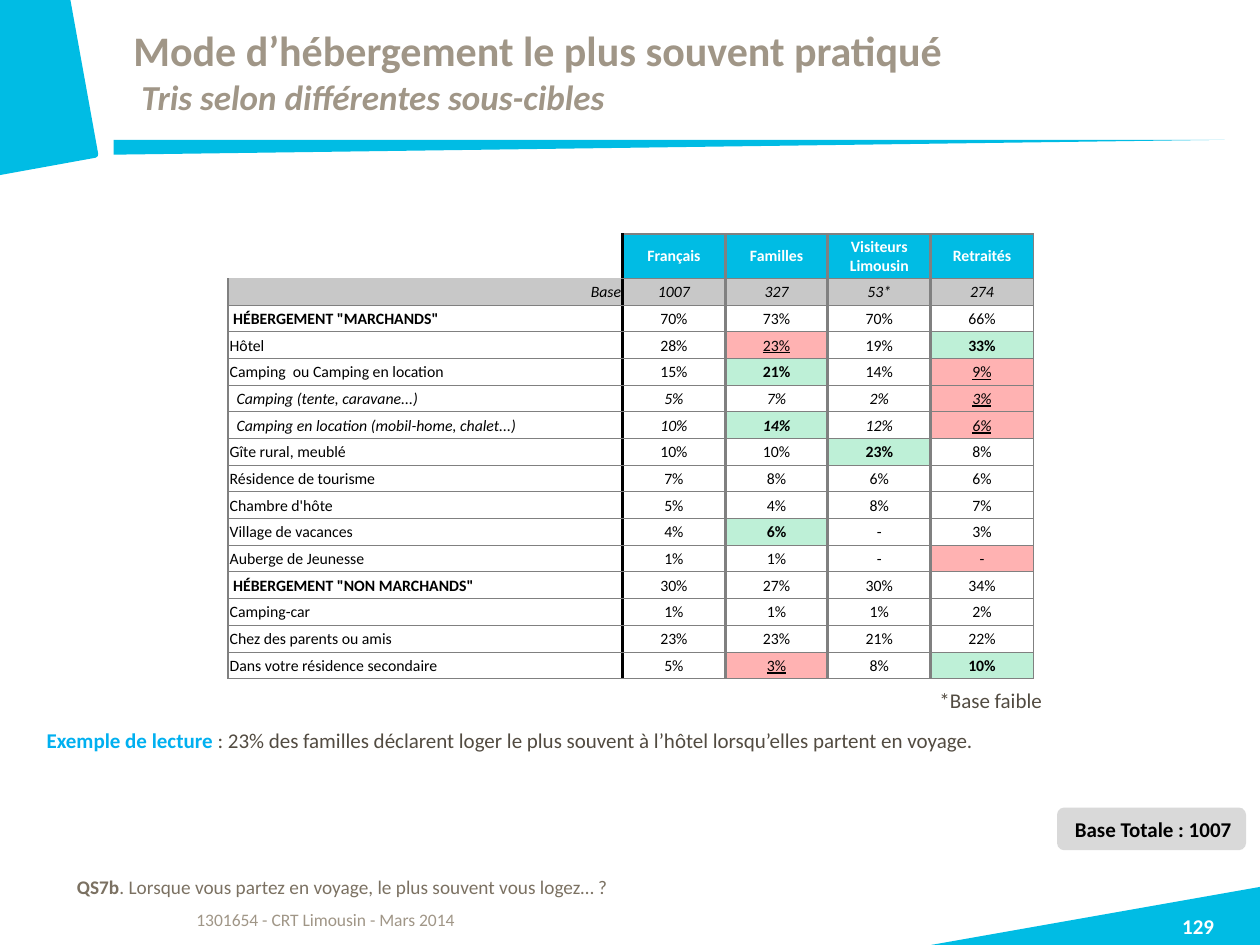
from lxml.etree import SubElement
from pptx import Presentation
from pptx.dml.color import RGBColor
from pptx.enum.shapes import MSO_SHAPE
from pptx.enum.text import MSO_ANCHOR, MSO_AUTO_SIZE, PP_ALIGN
from pptx.oxml.ns import qn
from pptx.util import Cm, Pt

FONT = "Calibri"
CYAN = RGBColor(0x00, 0xBC, 0xE4)
BLUE = RGBColor(0x00, 0xB0, 0xF0)
TAUPE = RGBColor(0xA0, 0x96, 0x87)
BROWN = RGBColor(0x7B, 0x71, 0x62)
DARK_BROWN = RGBColor(0x52, 0x4B, 0x41)
WHITE = RGBColor(0xFF, 0xFF, 0xFF)
BLACK = RGBColor(0x00, 0x00, 0x00)
GRID_GREY = RGBColor(0x80, 0x80, 0x80)
BASE_GREY = RGBColor(0xC8, 0xC8, 0xC8)
BADGE_GREY = RGBColor(0xD9, 0xD9, 0xD9)
HIGH_GREEN = RGBColor(0xBE, 0xF0, 0xD7)
LOW_RED = RGBColor(0xFF, 0xB2, 0xB2)
NO_TABLE_STYLE = "{2D5ABB26-0587-4C30-8999-92F81FD0307C}"

ROWS = [
    ("", "Français", "Familles", "Visiteurs Limousin", "Retraités"),
    ("Base", "1007", "327", "53*", "274"),
    ('HÉBERGEMENT "MARCHANDS"', "70%", "73%", "70%", "66%"),
    ("Hôtel", "28%", "23%", "19%", "33%"),
    ("Camping  ou Camping en location", "15%", "21%", "14%", "9%"),
    ("Camping (tente, caravane...)", "5%", "7%", "2%", "3%"),
    ("Camping en location (mobil-home, chalet...)", "10%", "14%", "12%", "6%"),
    ("Gîte rural, meublé", "10%", "10%", "23%", "8%"),
    ("Résidence de tourisme", "7%", "8%", "6%", "6%"),
    ("Chambre d'hôte", "5%", "4%", "8%", "7%"),
    ("Village de vacances", "4%", "6%", "-", "3%"),
    ("Auberge de Jeunesse", "1%", "1%", "-", "-"),
    ('HÉBERGEMENT "NON MARCHANDS"', "30%", "27%", "30%", "34%"),
    ("Camping-car", "1%", "1%", "1%", "2%"),
    ("Chez des parents ou amis", "23%", "23%", "21%", "22%"),
    ("Dans votre résidence secondaire", "5%", "3%", "8%", "10%"),
]
HEADER_ROW, BASE_ROW = 0, 1
GROUP_ROWS = {2, 12}
DETAIL_ROWS = {5, 6}
HIGH_CELLS = {(3, 4), (4, 2), (6, 2), (7, 3), (10, 2), (15, 4)}
LOW_CELLS = {(3, 2), (4, 4), (5, 4), (6, 4), (11, 4), (15, 2)}


def style_run(run, size, color, bold=False, italic=False, underline=False):
    """Format one run."""
    font = run.font
    font.name, font.size, font.color.rgb = FONT, Pt(size), color
    font.bold, font.italic, font.underline = bold, italic, underline


def fill_plain(shape, color):
    """Give a shape a flat fill without line or shadow."""
    shape.shadow.inherit = False
    shape.fill.solid()
    shape.fill.fore_color.rgb = color
    shape.line.fill.background()


def add_polygon(slide, left, top, points):
    """Draw a cyan outline from points in centimetres relative to a corner."""
    corners = [(Cm(left + x), Cm(top + y)) for x, y in points]
    builder = slide.shapes.build_freeform(*corners[0], scale=1.0)
    builder.add_line_segments(corners[1:], close=True)
    fill_plain(builder.convert_to_shape(), CYAN)


def add_decoration(slide, width, height):
    """Draw the corner blocks and the tapered rule of the page."""
    add_polygon(slide, width - 6.63, height - 1.17, [(0, 1.17), (6.63, 0), (6.63, 1.17)])
    add_polygon(slide, 0, 0, [(0, 0), (1.42, 0), (1.98, 3.1), (1.97, 3.15), (1.93, 3.18), (0, 3.53)])
    rule = slide.shapes.add_shape(MSO_SHAPE.RIGHT_TRIANGLE, Cm(2.29), Cm(2.82), Cm(22.4), Cm(0.3))
    fill_plain(rule, CYAN)
    rule.element.spPr.find(qn("a:xfrm")).set("flipV", "1")


def add_title(slide, left, top, width, height):
    """Place the title with its italic second line."""
    title = slide.shapes.title
    title.left, title.top, title.width, title.height = Cm(left), Cm(top), Cm(width), Cm(height)
    frame = title.text_frame
    frame.auto_size = MSO_AUTO_SIZE.NONE
    frame.vertical_anchor = MSO_ANCHOR.MIDDLE
    frame.margin_left = frame.margin_top = frame.margin_right = frame.margin_bottom = 0
    frame.text = "Mode d’hébergement le plus souvent pratiqué\v Tris selon différentes sous-cibles"
    paragraph = frame.paragraphs[0]
    paragraph.alignment = PP_ALIGN.LEFT
    heading, subtitle = paragraph.runs
    style_run(heading, 24, TAUPE, bold=True)
    style_run(subtitle, 20, TAUPE, bold=True, italic=True)


def add_text(slide, left, top, width, height, parts, size, alignment=PP_ALIGN.LEFT, margin=None):
    """Place a text box made of (text, color, bold) parts."""
    frame = slide.shapes.add_textbox(Cm(left), Cm(top), Cm(width), Cm(height)).text_frame
    frame.word_wrap = True
    if margin is not None:
        frame.margin_left = frame.margin_top = frame.margin_right = frame.margin_bottom = Cm(margin)
    paragraph = frame.paragraphs[0]
    paragraph.alignment = alignment
    for text, color, bold in parts:
        run = paragraph.add_run()
        run.text = text
        style_run(run, size, color, bold)


def add_badge(slide, left, top, width, height):
    """Place the rounded badge with the total base."""
    badge = slide.shapes.add_shape(MSO_SHAPE.ROUNDED_RECTANGLE, Cm(left), Cm(top), Cm(width), Cm(height))
    fill_plain(badge, BADGE_GREY)
    frame = badge.text_frame
    frame.text = "Base Totale : 1007"
    frame.word_wrap = False
    frame.paragraphs[0].alignment = PP_ALIGN.RIGHT
    style_run(frame.paragraphs[0].runs[0], 12, BLACK, bold=True)


def set_borders(cell, row, column):
    """Draw the grid lines of a cell according to its place."""
    last_row, last_column = len(ROWS) - 1, len(ROWS[0]) - 1
    left = {0: (GRID_GREY, 1), 1: (BLACK, 2)}.get(column, (GRID_GREY, 2))
    right = {0: (BLACK, 2), last_column: (GRID_GREY, 1)}.get(column, (GRID_GREY, 2))
    top = (GRID_GREY, 1 if row == HEADER_ROW else 0.5)
    bottom = (GRID_GREY, 1 if row == last_row else 0.5)
    borders = {"a:lnL": left, "a:lnR": right, "a:lnT": top, "a:lnB": bottom}
    if column == 0 and row == BASE_ROW:
        del borders["a:lnT"]
    if column == 0 and row == HEADER_ROW:
        borders = {"a:lnR": right}
    properties = cell._tc.get_or_add_tcPr()
    for tag, (color, width) in borders.items():
        line = SubElement(properties, qn(tag), w=str(Pt(width)))
        SubElement(SubElement(line, qn("a:solidFill")), qn("a:srgbClr"), val=str(color))


def cell_fill(row, column):
    """Return the fill color of a cell, or None."""
    if row == HEADER_ROW:
        return CYAN if column else None
    if row == BASE_ROW:
        return BASE_GREY
    if (row, column) in HIGH_CELLS:
        return HIGH_GREEN
    return LOW_RED if (row, column) in LOW_CELLS else None


def format_cell(cell, row, column, text):
    """Write and format one cell of the results table."""
    set_borders(cell, row, column)
    color = cell_fill(row, column)
    if color is None:
        cell.fill.background()
    else:
        cell.fill.solid()
        cell.fill.fore_color.rgb = color
    cell.vertical_anchor = MSO_ANCHOR.MIDDLE
    cell.margin_left = cell.margin_right = cell.margin_top = Cm(0 if row == HEADER_ROW else 0.03)
    cell.margin_bottom = 0
    if column == 0 and row in GROUP_ROWS | DETAIL_ROWS:
        cell.margin_left = Cm(0.1 if row in GROUP_ROWS else 0.17)
    cell.text_frame.text = text
    paragraph = cell.text_frame.paragraphs[0]
    label_alignment = PP_ALIGN.RIGHT if row == BASE_ROW else PP_ALIGN.LEFT
    paragraph.alignment = PP_ALIGN.CENTER if column else label_alignment
    bold = row == HEADER_ROW or (row, column) in HIGH_CELLS or (column == 0 and row in GROUP_ROWS)
    for run in paragraph.runs:
        style_run(run, 9, WHITE if row == HEADER_ROW else BLACK, bold,
                  italic=row == BASE_ROW or row in DETAIL_ROWS,
                  underline=(row, column) in LOW_CELLS and text != "-")


def add_results_table(slide, left, top, width, height):
    """Place the table of accommodation by target group."""
    label_width, header_height = 7.95, 0.89
    value_width = (width - label_width) / (len(ROWS[0]) - 1)
    row_height = (height - header_height) / (len(ROWS) - 1)
    table = slide.shapes.add_table(len(ROWS), len(ROWS[0]), Cm(left), Cm(top), Cm(width), Cm(height)).table
    table.first_row = table.horz_banding = False
    table._tbl.tblPr.find(qn("a:tableStyleId")).text = NO_TABLE_STYLE
    for index, column in enumerate(table.columns):
        column.width = Cm(value_width if index else label_width)
    for index, table_row in enumerate(table.rows):
        table_row.height = Cm(row_height if index else header_height)
    for row, values in enumerate(ROWS):
        for column, text in enumerate(values):
            format_cell(table.cell(row, column), row, column, text)


def main():
    """Build the slide and save it."""
    presentation = Presentation()
    presentation.slide_width, presentation.slide_height = Cm(25.4), Cm(19.05)
    slide = presentation.slides.add_slide(presentation.slide_layouts[5])
    add_decoration(slide, 25.4, 19.05)
    add_title(slide, 2.69, 0.33, 20.6, 2.21)
    add_text(slide, 3.71, 18.19, 17.2, 0.86, [("1301654 - CRT Limousin - Mars 2014", TAUPE, False)], 10)
    add_text(slide, 22.91, 18.42, 2.49, 0.63, [("129", WHITE, True)], 12, PP_ALIGN.CENTER, 0)
    question = ". Lorsque vous partez en voyage, le plus souvent vous logez…\u00a0?".replace("\u00a0", " ")
    add_text(slide, 1.3, 17.53, 24.1, 1.19, [("QS7b", BROWN, True), (question, BROWN, False)], 11)
    add_badge(slide, 21.31, 16.28, 3.81, 0.86)
    add_results_table(slide, 4.6, 4.72, 16.23, 8.97)
    add_text(slide, 18.69, 13.74, 3, 0.76, [("*Base faible", DARK_BROWN, False)], 12)
    example = ": 23% des familles déclarent loger le plus souvent à l’hôtel lorsqu’elles partent en voyage."
    add_text(slide, 0.69, 14.55, 23.22, 0.76,
             [("Exemple de lecture ", BLUE, True), (example, DARK_BROWN, False)], 12)
    presentation.save("out.pptx")


if __name__ == "__main__":
    main()
